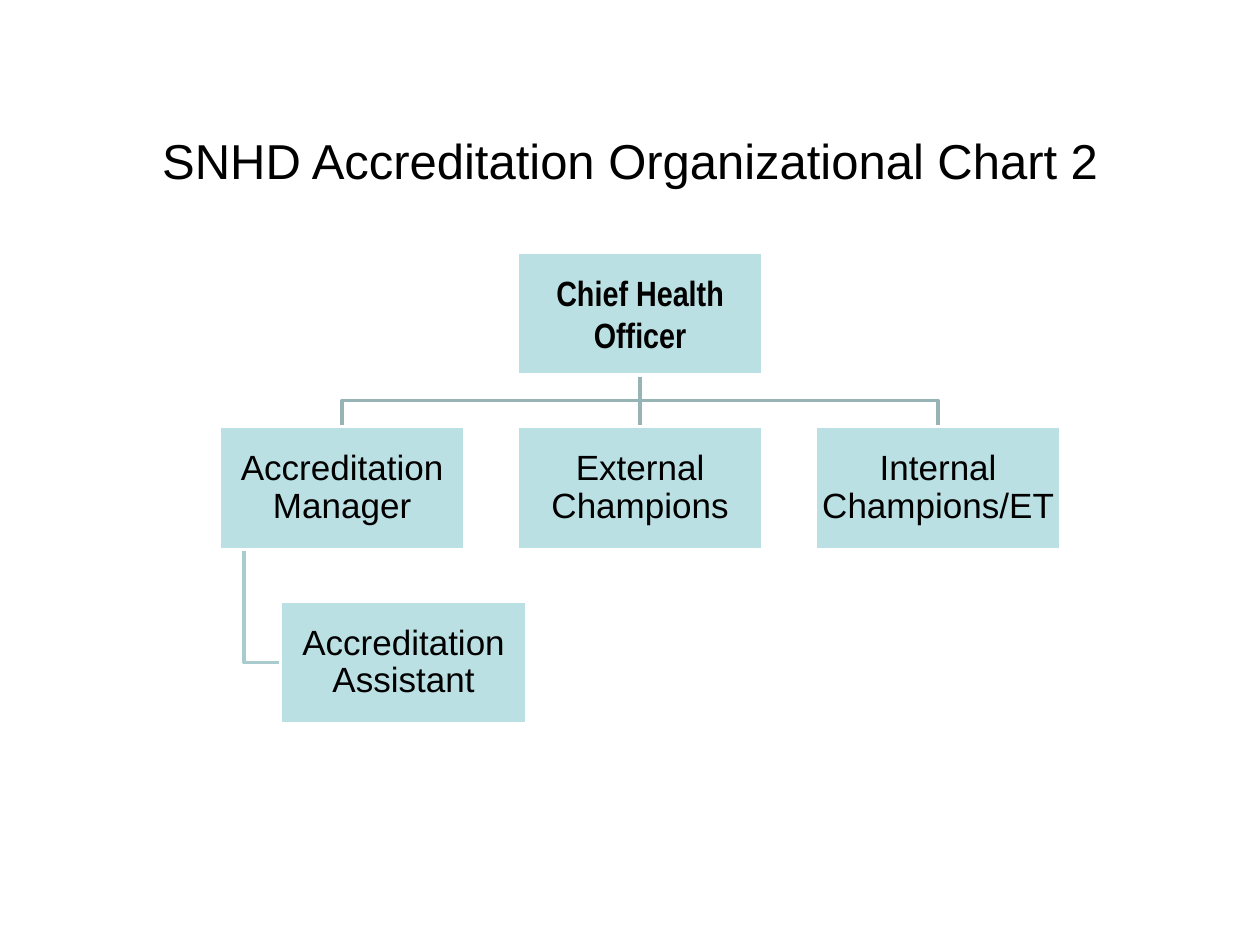
from dataclasses import dataclass

from pptx import Presentation
from pptx import util as u
from pptx.dml.color import RGBColor
from pptx.enum import shapes, text
from pptx.oxml.ns import qn
from pptx.slide import Slide
from lxml import etree

BLACK = RGBColor(0x00, 0x00, 0x00)
WHITE = RGBColor(0xFF, 0xFF, 0xFF)
BOX_FILL = RGBColor(0xBB, 0xE0, 0xE3)
BRANCH = RGBColor(0x96, 0xB3, 0xB6)
SUB_BRANCH = RGBColor(0xAA, 0xCB, 0xCE)

BOX_WIDTH, BOX_HEIGHT = 140.4, 70.2
LEFT, TOP = 125.3, 144
COLUMN_STEP, ROW_STEP = 170.3, 99.75
INDENT = 35.1


@dataclass
class OrgChart:
    slide: Slide
    font_name: str = "Arial"
    title_size: float = 28
    box_size: float = 20
    line_width: float = 2

    def style_paragraph(self, paragraph, size, name=None, bold=False):
        paragraph.alignment = text.PP_ALIGN.CENTER
        font = paragraph.font
        font.name = name or self.font_name
        font.size = u.Pt(size)
        font.bold = bold
        font.color.rgb = BLACK

    def title(self, wording):
        shape = self.slide.shapes.title
        shape.left, shape.top = u.Pt(36), u.Pt(21.6)
        shape.width, shape.height = u.Pt(648), u.Pt(90)
        frame = shape.text_frame
        frame.text = wording
        frame.vertical_anchor = text.MSO_ANCHOR.BOTTOM
        self.style_paragraph(frame.paragraphs[0], self.title_size)

    def box(self, wording, column, row, indent=0, name=None, bold=False, spacing=0.9):
        shape = self.slide.shapes.add_shape(
            shapes.MSO_SHAPE.RECTANGLE,
            u.Pt(LEFT + column * COLUMN_STEP + indent),
            u.Pt(TOP + row * ROW_STEP),
            u.Pt(BOX_WIDTH),
            u.Pt(BOX_HEIGHT),
        )
        shape.shadow.inherit = False
        shape.fill.solid()
        shape.fill.fore_color.rgb = BOX_FILL
        shape.line.color.rgb = WHITE
        shape.line.width = u.Pt(self.line_width)
        frame = shape.text_frame
        frame.word_wrap = True
        frame.vertical_anchor = text.MSO_ANCHOR.MIDDLE
        frame.margin_left = frame.margin_right = u.Pt(0.7)
        frame.margin_top = frame.margin_bottom = u.Pt(0.7)
        frame.text = wording
        paragraph = frame.paragraphs[0]
        paragraph.line_spacing = spacing
        self.style_paragraph(paragraph, self.box_size, name, bold)
        return shape

    def straight(self, parent, child, color):
        line = self.slide.shapes.add_connector(shapes.MSO_CONNECTOR.STRAIGHT, 0, 0, 0, 0)
        line.begin_connect(parent, 2)
        line.end_connect(child, 0)
        line.line.color.rgb = color
        line.line.width = u.Pt(self.line_width)
        etree.SubElement(line._element.spPr, qn("a:effectLst"))
        self.send_to_back(line)

    def elbow(self, points, color):
        builder = self.slide.shapes.build_freeform(*points[0])
        builder.add_line_segments(points[1:], close=False)
        shape = builder.convert_to_shape()
        shape.shadow.inherit = False
        shape.fill.background()
        shape.line.color.rgb = color
        shape.line.width = u.Pt(self.line_width)
        self.send_to_back(shape)

    def fork(self, parent, child, color):
        start_x = parent.left + parent.width // 2
        end_x = child.left + child.width // 2
        start_y = parent.top + parent.height
        middle_y = (start_y + child.top) // 2
        self.elbow(
            [(start_x, start_y), (start_x, middle_y), (end_x, middle_y), (end_x, child.top)],
            color,
        )

    def hang(self, parent, child, color):
        x = parent.left + parent.width // 10
        y = child.top + child.height // 2
        self.elbow([(x, parent.top + parent.height), (x, y), (child.left, y)], color)

    def send_to_back(self, shape):
        self.slide.shapes._spTree.insert(2, shape._element)


def main():
    presentation = Presentation()
    presentation.slide_width, presentation.slide_height = u.Pt(720), u.Pt(540)
    chart = OrgChart(presentation.slides.add_slide(presentation.slide_layouts[5]))
    chart.title("SNHD Accreditation Organizational Chart 2")

    officer = chart.box("Chief Health Officer", 1, 0, name="Arial Narrow", bold=True, spacing=1.0)
    manager = chart.box("Accreditation Manager", 0, 1)
    external = chart.box("External Champions", 1, 1)
    internal = chart.box("Internal Champions/ET", 2, 1)
    assistant = chart.box("Accreditation Assistant", 0, 2, indent=INDENT)

    chart.fork(officer, manager, BRANCH)
    chart.straight(officer, external, BRANCH)
    chart.fork(officer, internal, BRANCH)
    chart.hang(manager, assistant, SUB_BRANCH)

    presentation.save("out.pptx")


if __name__ == "__main__":
    main()
